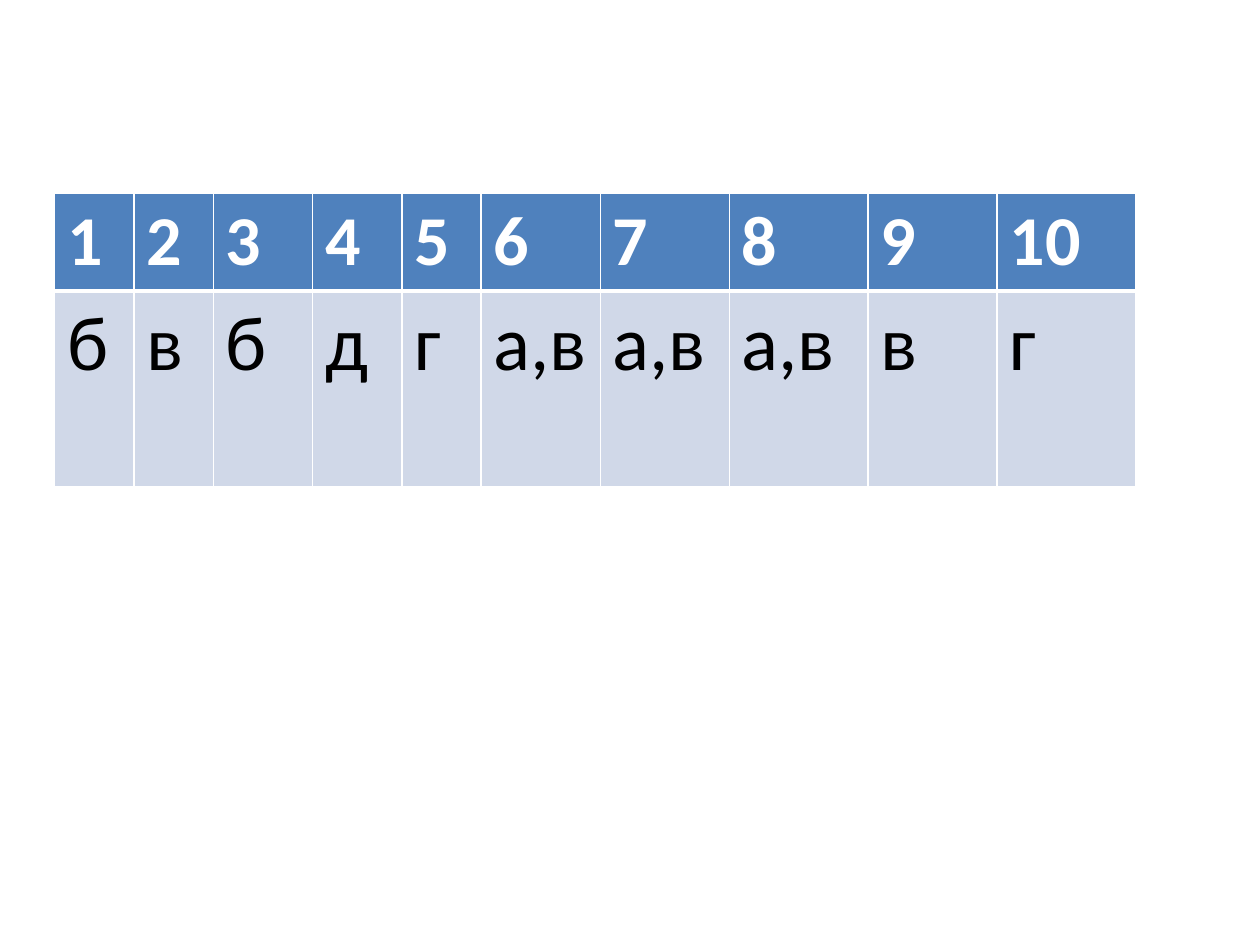
from dataclasses import dataclass

from lxml import etree
from pptx import Presentation
from pptx.dml.color import RGBColor
from pptx.oxml.ns import qn
from pptx.util import Pt


@dataclass(frozen=True)
class Theme:
    font: str = "Calibri"
    head: str = "4F81BD"
    body: str = "D0D8E8"
    light: str = "FFFFFF"
    dark: str = "000000"
    headsize: int = 40
    bodysize: int = 44
    thin: int = 1
    thick: int = 3


THEME = Theme()
ANSWERS = ["б", "в", "б", "д", "г", "а,в", "а,в", "а,в", "в", "г"]
SHARES = [8, 8, 10, 9, 8, 12, 13, 14, 13, 14]
HEIGHTS = [56, 112]


def edge(cell, side, width):
    line = etree.SubElement(cell._tc.get_or_add_tcPr(), qn(f"a:ln{side}"), w=str(Pt(width)))
    fill = etree.SubElement(line, qn("a:solidFill"))
    etree.SubElement(fill, qn("a:srgbClr"), val=THEME.light)


def style(cell, word, head):
    for side in "LRTB":
        rule = side == ("B" if head else "T")
        edge(cell, side, THEME.thick if rule else THEME.thin)
    cell.fill.solid()
    cell.fill.fore_color.rgb = RGBColor.from_string(THEME.head if head else THEME.body)
    cell.text = word
    font = cell.text_frame.paragraphs[0].font
    font.name = THEME.font
    font.size = Pt(THEME.headsize if head else THEME.bodysize)
    font.bold = head
    font.color.rgb = RGBColor.from_string(THEME.light if head else THEME.dark)


def answer_table(slide, left, top, width):
    rows = [[str(n) for n in range(1, len(ANSWERS) + 1)], ANSWERS]
    table = slide.shapes.add_table(
        len(rows), len(ANSWERS), Pt(left), Pt(top), Pt(width), Pt(sum(HEIGHTS))
    ).table
    for column, share in zip(table.columns, SHARES):
        column.width = Pt(width * share / sum(SHARES))
    for r, (words, height) in enumerate(zip(rows, HEIGHTS)):
        table.rows[r].height = Pt(height)
        for c, word in enumerate(words):
            style(table.cell(r, c), word, head=r == 0)


def main():
    deck = Presentation()
    deck.slide_width, deck.slide_height = Pt(720), Pt(540)
    slide = deck.slides.add_slide(deck.slide_layouts[6])
    answer_table(slide, 31.2, 110.2, 618)
    deck.save("out.pptx")


if __name__ == "__main__":
    main()
